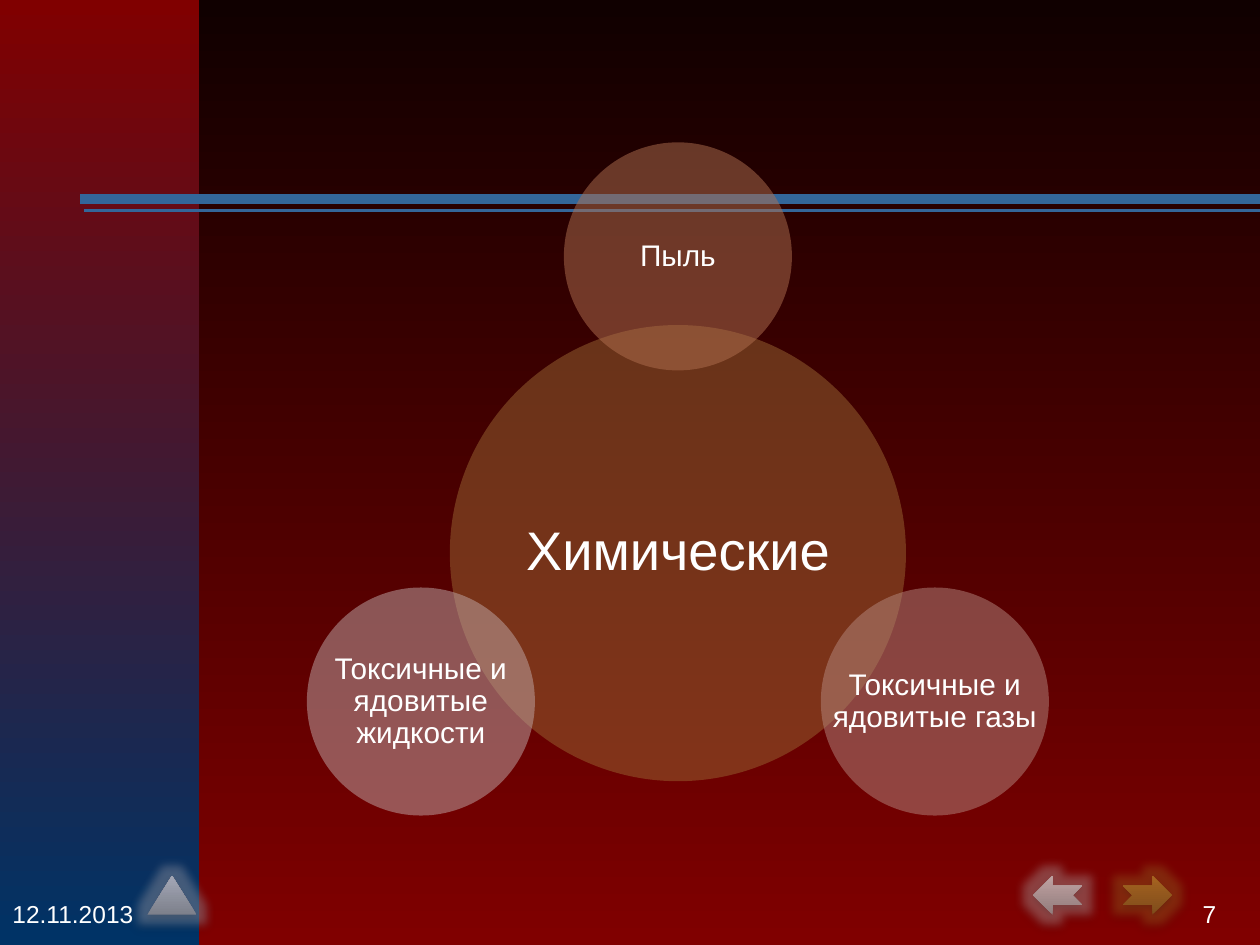
"""Build a slide on chemical hazards: a hub circle with three satellites."""
from dataclasses import dataclass
from math import cos, radians, sin

from lxml.etree import SubElement
from pptx import Presentation
from pptx.dml.color import RGBColor
from pptx.dml.fill import FillFormat
from pptx.enum.shapes import MSO_CONNECTOR, MSO_SHAPE
from pptx.enum.text import MSO_ANCHOR, PP_ALIGN
from pptx.oxml.ns import qn
from pptx.shapes.autoshape import Shape
from pptx.slide import Slide
from pptx.util import Inches, Pt

COLUMNS, ROWS = 100, 75
WIDTH, HEIGHT = Inches(10), Inches(7.5)

BLACK = RGBColor(0x00, 0x00, 0x00)
WHITE = RGBColor(0xFF, 0xFF, 0xFF)
DARK = RGBColor(0x10, 0x00, 0x00)
RED = RGBColor(0x80, 0x00, 0x00)
NAVY = RGBColor(0x00, 0x33, 0x66)
BLUE = RGBColor(0x33, 0x66, 0x99)
BROWN = RGBColor(0x99, 0x66, 0x33)
COPPER = RGBColor(0xB1, 0x70, 0x50)
ROSE = RGBColor(0xB5, 0x89, 0x80)
PALE_ROSE = RGBColor(0xC0, 0xAA, 0xAA)
AMBER_DARK = RGBColor(0x7E, 0x4C, 0x1B)
AMBER = RGBColor(0xA6, 0x63, 0x20)
MAUVE_DARK = RGBColor(0x92, 0x7C, 0x7C)
MAUVE = RGBColor(0xBF, 0xA2, 0xA2)
STEEL_DARK = RGBColor(0x7D, 0x80, 0x8B)
STEEL = RGBColor(0xA3, 0xA7, 0xB6)


@dataclass(frozen=True)
class Box:
    """A rectangle in grid columns and rows."""
    column: float
    row: float
    columns: float
    rows: float

    def lengths(self) -> tuple[int, int, int, int]:
        """Return left, top, width and height on the slide."""
        return (across(self.column), down(self.row),
                across(self.columns), down(self.rows))


@dataclass(frozen=True)
class Satellite:
    """A small circle placed at an angle around the hub."""
    text: str
    color: RGBColor
    angle: float


@dataclass(frozen=True)
class NavigationButton:
    """A glowing navigation symbol in the footer."""
    preset: MSO_SHAPE
    column: float
    bottom: RGBColor
    top: RGBColor
    flipped: bool = False


@dataclass(frozen=True)
class Rule:
    """A horizontal line below the title area."""
    row: float
    points: float


HUB_COLUMN, HUB_ROW = 53.8, 43.9
HUB_DIAMETER = 36.2
ORBIT = 23.55
SATELLITES = (
    Satellite("Пыль", COPPER, -90),
    Satellite("Токсичные и ядовитые газы", ROSE, 30),
    Satellite("Токсичные и ядовитые жидкости", PALE_ROSE, 150),
)
BUTTONS = (
    NavigationButton(MSO_SHAPE.NOTCHED_RIGHT_ARROW, 89.1, AMBER_DARK, AMBER),
    NavigationButton(MSO_SHAPE.NOTCHED_RIGHT_ARROW, 82, MAUVE_DARK, MAUVE, True),
    NavigationButton(MSO_SHAPE.FLOWCHART_EXTRACT, 11.7, STEEL_DARK, STEEL),
)
RULES = (Rule(16.7, 2), Rule(15.8, 6))


def across(columns: float) -> int:
    """Turn grid columns into a length."""
    return round(WIDTH * columns / COLUMNS)


def down(rows: float) -> int:
    """Turn grid rows into a length."""
    return round(HEIGHT * rows / ROWS)


def paint_gradient(fill: FillFormat, start: RGBColor, end: RGBColor, angle: float) -> None:
    """Apply a two-colour gradient, with the angle counted counter-clockwise."""
    fill.gradient()
    fill.gradient_angle = angle
    for stop, color, position in zip(fill.gradient_stops, (start, end), (0, 1)):
        stop.color.rgb = color
        stop.position = position


def add_color(parent, color: RGBColor, percent: int) -> None:
    """Add a partly opaque colour element."""
    element = SubElement(parent, qn("a:srgbClr"), val=str(color))
    SubElement(element, qn("a:alpha"), val=str(percent * 1000))


def add_plain_shape(slide: Slide, preset: MSO_SHAPE, box: Box) -> Shape:
    """Add a shape without line or shadow."""
    shape = slide.shapes.add_shape(preset, *box.lengths())
    shape.shadow.inherit = False
    shape.line.fill.background()
    return shape


def add_text(slide: Slide, text: str, box: Box, *, size: float, inset: float = 0.1,
             alignment: PP_ALIGN = PP_ALIGN.LEFT, spacing: float = 1) -> None:
    """Add a vertically centred white text box."""
    frame = slide.shapes.add_textbox(*box.lengths()).text_frame
    frame.word_wrap = True
    frame.vertical_anchor = MSO_ANCHOR.MIDDLE
    frame.margin_left = frame.margin_right = Inches(inset)
    frame.margin_top = frame.margin_bottom = Inches(min(inset, 0.05))
    paragraph = frame.paragraphs[0]
    paragraph.alignment = alignment
    paragraph.line_spacing = spacing
    run = paragraph.add_run()
    run.text = text
    run.font.name = "Arial"
    run.font.size = Pt(size)
    run.font.color.rgb = WHITE


def add_circle(slide: Slide, text: str, color: RGBColor, column: float, row: float,
               diameter: float, size: float, inset: float) -> None:
    """Add a half-transparent circle around a centre, with its label."""
    box = Box(column - diameter / 2, row - diameter / 2, diameter, diameter)
    circle = add_plain_shape(slide, MSO_SHAPE.OVAL, box)
    circle.fill.solid()
    circle.fill.fore_color.rgb = color
    color_element = circle.fill._xPr.find(qn("a:solidFill")).find(qn("a:srgbClr"))
    SubElement(color_element, qn("a:alpha"), val="50000")
    add_text(slide, text, box, size=size, inset=inset,
             alignment=PP_ALIGN.CENTER, spacing=0.9)


def add_rule(slide: Slide, rule: Rule) -> None:
    """Add a horizontal line running to the right edge."""
    line = slide.shapes.add_connector(
        MSO_CONNECTOR.STRAIGHT, across(6.8), down(rule.row), WIDTH, down(rule.row))
    line.line.color.rgb = BLUE
    line.line.width = Pt(rule.points)
    line.line._ln.set("cap", "sq")
    SubElement(line._element.spPr, qn("a:effectLst"))


def add_button(slide: Slide, button: NavigationButton) -> None:
    """Add a footer symbol with a glow and a soft shadow."""
    shape = add_plain_shape(slide, button.preset, Box(button.column, 69.5, 3.9, 3.1))
    paint_gradient(shape.fill, button.bottom, button.top, 90)
    if button.flipped:
        shape._element.spPr.find(qn("a:xfrm")).set("flipH", "1")
    effects = shape._element.spPr.find(qn("a:effectLst"))
    glow = SubElement(effects, qn("a:glow"), rad=str(Pt(11)))
    add_color(glow, button.top, 40)
    shadow = SubElement(effects, qn("a:outerShdw"), blurRad=str(Pt(3.1)),
                        dist=str(Pt(1.8)), dir="5400000", rotWithShape="0")
    add_color(shadow, BLACK, 35)


def main() -> None:
    """Build and save the presentation."""
    presentation = Presentation()
    presentation.slide_width, presentation.slide_height = WIDTH, HEIGHT
    slide = presentation.slides.add_slide(presentation.slide_layouts[6])
    paint_gradient(slide.background.fill, DARK, RED, 270)
    sidebar = add_plain_shape(slide, MSO_SHAPE.RECTANGLE, Box(0, 0, 15.8, ROWS))
    paint_gradient(sidebar.fill, RED, NAVY, 270)
    for rule in RULES:
        add_rule(slide, rule)
    add_text(slide, "7", Box(76.7, 70, 20.8, 5), size=14, alignment=PP_ALIGN.RIGHT)
    add_text(slide, "12.11.2013", Box(0, 70, 20.8, 5), size=14)
    for button in BUTTONS:
        add_button(slide, button)
    add_circle(slide, "Химические", BROWN, HUB_COLUMN, HUB_ROW, HUB_DIAMETER, 31, 0.04)
    for satellite in SATELLITES:
        angle = radians(satellite.angle)
        add_circle(slide, satellite.text, satellite.color,
                   HUB_COLUMN + ORBIT * cos(angle), HUB_ROW + ORBIT * sin(angle),
                   HUB_DIAMETER / 2, 17, 0.02)
    presentation.save("out.pptx")


if __name__ == "__main__":
    main()
